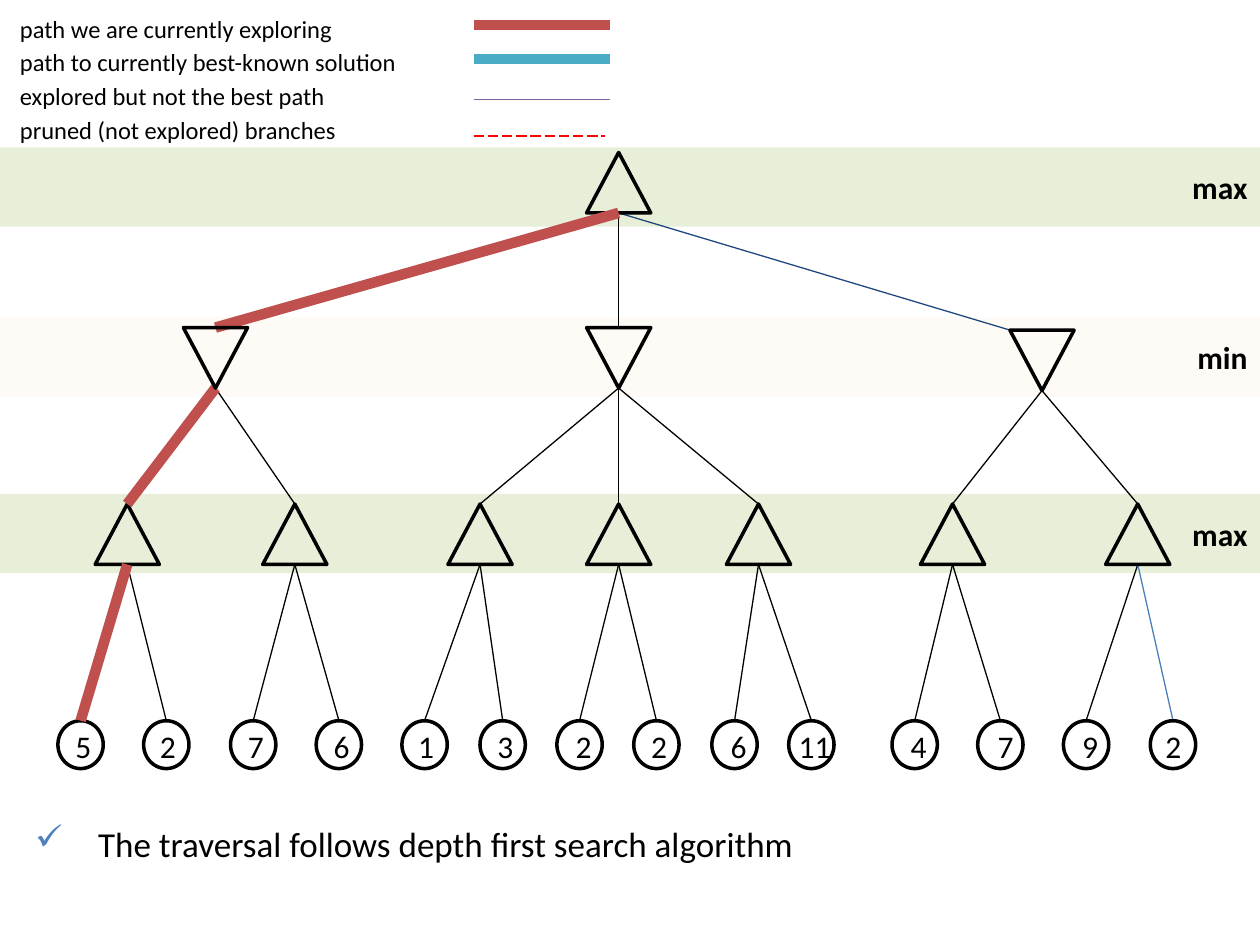
from lxml import etree
from pptx import Presentation
from pptx.dml.color import RGBColor
from pptx.enum.dml import MSO_LINE
from pptx.enum.shapes import MSO_CONNECTOR, MSO_SHAPE
from pptx.enum.text import MSO_ANCHOR, PP_ALIGN
from pptx.oxml.ns import qn
from pptx.util import Inches, Pt

RECT, TRIANGLE, OVAL = MSO_SHAPE.RECTANGLE, MSO_SHAPE.ISOSCELES_TRIANGLE, MSO_SHAPE.OVAL
STRAIGHT, LONG_DASH = MSO_CONNECTOR.STRAIGHT, MSO_LINE.LONG_DASH
RIGHT, MIDDLE = PP_ALIGN.RIGHT, MSO_ANCHOR.MIDDLE

THEME = {
    "ink": RGBColor.from_string("000000"),
    "max": RGBColor.from_string("9BBB59"),
    "min": RGBColor.from_string("FDEADA"),
    "current": RGBColor.from_string("C0504D"),
    "best": RGBColor.from_string("4BACC6"),
    "explored": RGBColor.from_string("7D60A0"),
    "pruned": RGBColor.from_string("FF0000"),
    "navy": RGBColor.from_string("1F497D"),
    "blue": RGBColor.from_string("4B7EBC"),
    "check": "4F81BD",
    "legend": {"name": "Calibri", "size": Pt(14)},
    "label": {"name": "Calibri", "size": Pt(18)},
    "level": {"name": "Calibri", "size": Pt(18), "bold": True},
    "note": {"name": "Calibri", "size": Pt(20)},
    "thin": Pt(0.75),
    "outline": Pt(2),
    "thick": Pt(6),
}

prs = Presentation()
prs.slide_width, prs.slide_height = Inches(10), Inches(7.5)
slide = prs.slides.add_slide(prs.slide_layouts[6])
shapes = slide.shapes


def add_line(start, end, color="ink", width="thin"):
    line = shapes.add_connector(STRAIGHT, *map(Inches, (*start, *end)))
    line.line.color.rgb = THEME[color]
    line.line.width = THEME[width]
    etree.SubElement(line._element.spPr, qn("a:effectLst"))
    return line


def style_text(paragraph, text, style):
    paragraph.text = text
    for key, value in THEME[style].items():
        setattr(paragraph.font, key, value)
    paragraph.font.color.rgb = THEME["ink"]


# Level bands
for level, top in (("min", 2.52), ("max", 1.17), ("max", 3.92)):
    band = shapes.add_shape(RECT, 0, Inches(top), Inches(10), Inches(0.63))
    band.shadow.inherit = False
    band.line.fill.background()
    band.fill.solid()
    band.fill.fore_color.rgb = THEME[level]
    tint = band._element.spPr.find(qn("a:solidFill"))[0]
    etree.SubElement(tint, qn("a:alpha"), val="23000")
    band.text_frame.vertical_anchor = MIDDLE
    caption = band.text_frame.paragraphs[0]
    caption.alignment = RIGHT
    style_text(caption, level, "level")

# Tree data: centres, tops and parent-child links
NODE_W, NODE_H, LEAF_W, LEAF_H = 0.51, 0.48, 0.36, 0.38
ROOT_X, ROOT_TOP = 4.91, 1.21
MIN_NODES = [(1.71, 2.6), (4.91, 2.6), (8.27, 2.62)]
MAX_XS, MAX_TOP = [1.01, 2.34, 3.81, 4.91, 6.02, 7.56, 9.03], 4.0
MIN_CHILDREN = [MAX_XS[:2], MAX_XS[2:5], MAX_XS[5:]]
LEAF_TOP = 5.72
# Each leaf: value, centre, left edge of its label
LEAVES = [
    ("5", 0.64, 0.5), ("2", 1.32, 1.17), ("7", 2.01, 1.87), ("6", 2.69, 2.55),
    ("1", 3.37, 3.22), ("3", 3.99, 3.85), ("2", 4.6, 4.47), ("2", 5.21, 5.07),
    ("6", 5.83, 5.7), ("11", 6.44, 6.24), ("4", 7.26, 7.13), ("7", 7.94, 7.82),
    ("9", 8.62, 8.49), ("2", 9.31, 9.15),
]

root_base = (ROOT_X, ROOT_TOP + NODE_H)
current_path = [(root_base, MIN_NODES[0])]
other_edges = [
    (root_base, MIN_NODES[1], "ink"),
    (root_base, (MIN_NODES[2][0] - NODE_W / 2, MIN_NODES[2][1]), "navy"),
]
for (x, top), children in zip(MIN_NODES, MIN_CHILDREN):
    for child_x in children:
        ends = ((x, top + NODE_H), (child_x, MAX_TOP))
        if child_x == MAX_XS[0]:
            current_path.append(ends)
        else:
            other_edges.append((*ends, "ink"))
for i, (value, x, label_left) in enumerate(LEAVES):
    ends = ((MAX_XS[i // 2], MAX_TOP + NODE_H), (x, LEAF_TOP))
    if i == 0:
        current_path.append(ends)
    else:
        last = i == len(LEAVES) - 1
        other_edges.append((*ends, "blue" if last else "ink"))

# Branches, with the current path above the others
for start, end, color in other_edges:
    add_line(start, end, color)

# Nodes: min nodes point down
nodes = [(TRIANGLE, ROOT_X, ROOT_TOP, NODE_W, NODE_H, 0)]
nodes += [(TRIANGLE, x, MAX_TOP, NODE_W, NODE_H, 0) for x in MAX_XS]
nodes += [(OVAL, x, LEAF_TOP, LEAF_W, LEAF_H, 0) for _, x, _ in LEAVES]
nodes += [(TRIANGLE, x, top, NODE_W, NODE_H, 180) for x, top in MIN_NODES[1:]]
first_min = (TRIANGLE, *MIN_NODES[0], NODE_W, NODE_H, 180)
for kind, x, top, width, height, turn in nodes + [first_min]:
    if turn and x == MIN_NODES[0][0]:
        for start, end in current_path:
            add_line(start, end, "current", "thick")
    node = shapes.add_shape(kind, *map(Inches, (x - width / 2, top, width, height)))
    node.rotation = turn
    node.shadow.inherit = False
    node.fill.background()
    node.line.color.rgb = THEME["ink"]
    node.line.width = THEME["outline"]

# Leaf values
for value, x, label_left in LEAVES:
    label_width = 0.3 * len(value)
    label = shapes.add_textbox(*map(Inches, (label_left, LEAF_TOP, label_width, 0.4)))
    style_text(label.text_frame.paragraphs[0], value, "label")

# Legend
legend = shapes.add_textbox(*map(Inches, (0.06, 0.06, 5.06, 1.18)))
legend.text_frame.word_wrap = True
LEGEND = [
    ("path we are currently exploring", "current", "thick", 0.2, 4.84),
    ("path to currently best-known solution", "best", "thick", 0.47, 4.84),
    ("explored but not the best path", "explored", "thin", 0.79, 4.84),
    ("pruned (not explored) branches", "pruned", "thin", 1.08, 4.8),
]
for i, (meaning, color, width, y, right) in enumerate(LEGEND):
    entry = legend.text_frame.paragraphs[0] if i == 0 else legend.text_frame.add_paragraph()
    if i:
        entry.space_before = Pt(2.4)
    style_text(entry, meaning, "legend")
    sample = add_line((3.76, y), (right, y), color, width)
    if color == "pruned":
        sample.line.dash_style = LONG_DASH

# Note with a check mark bullet
note = shapes.add_textbox(*map(Inches, (0.18, 6.48, 7.61, 0.4)))
note.text_frame.word_wrap = True
remark = note.text_frame.paragraphs[0]
props = remark._p.get_or_add_pPr()
props.set("marL", str(Inches(0.5)))
props.set("indent", str(-Inches(0.5)))
bullet_color = etree.SubElement(props, qn("a:buClr"))
etree.SubElement(bullet_color, qn("a:srgbClr"), val=THEME["check"])
etree.SubElement(props, qn("a:buChar"), char="✓")
style_text(remark, "The traversal follows depth first search algorithm", "note")

prs.save("out.pptx")
